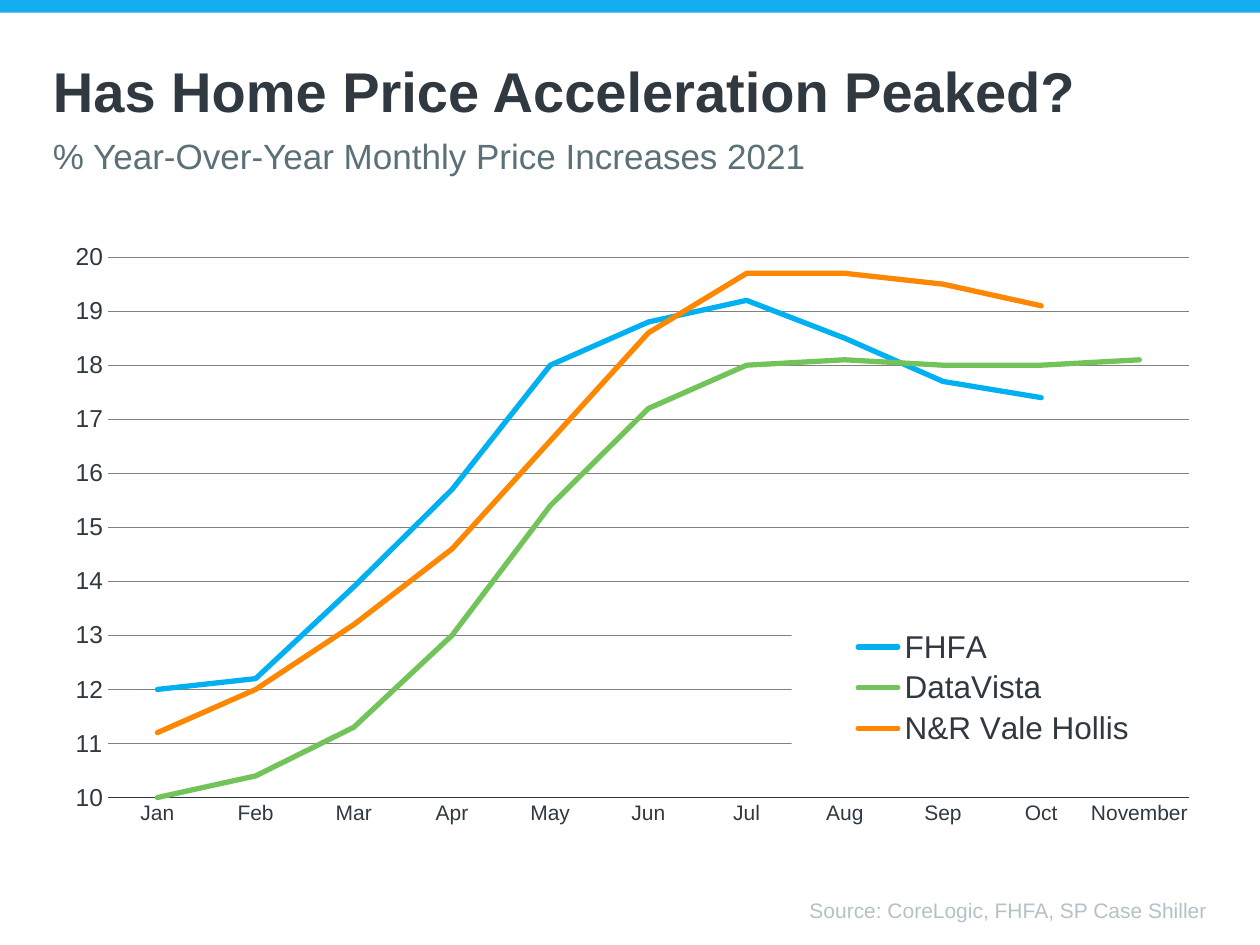
from dataclasses import dataclass

from lxml.etree import SubElement
from pptx import Presentation
from pptx.chart.data import CategoryChartData
from pptx.dml.color import RGBColor
from pptx.enum.chart import XL_CHART_TYPE, XL_LEGEND_POSITION, XL_TICK_MARK
from pptx.enum.shapes import MSO_SHAPE
from pptx.enum.text import MSO_ANCHOR, PP_ALIGN
from pptx.oxml.ns import qn
from pptx.util import Inches, Pt

FONT = "Arial"
INK = "303840"
MONTHS = ["Jan", "Feb", "Mar", "Apr", "May", "Jun", "Jul", "Aug", "Sep", "Oct", "November"]


@dataclass
class PriceIndex:
    name: str
    color: str
    values: list[float | None]


@dataclass
class Label:
    text: str
    top: float
    height: float
    size: int
    color: str
    bold: bool = False
    align: PP_ALIGN = PP_ALIGN.LEFT


INDEXES = [
    PriceIndex("FHFA", "00B0F0", [12, 12.2, 13.9, 15.7, 18, 18.8, 19.2, 18.5, 17.7, 17.4, None]),
    PriceIndex("DataVista", "72C45A", [10, 10.4, 11.3, 13, 15.4, 17.2, 18, 18.1, 18, 18, 18.1]),
    PriceIndex("N&R Vale Hollis", "FD8700", [11.2, 12, 13.2, 14.6, 16.6, 18.6, 19.7, 19.7, 19.5, 19.1, None]),
]
TITLE = Label("Has Home Price Acceleration Peaked?", 0.45, 0.5, 32, INK, bold=True)
SUBTITLE = Label("% Year-Over-Year Monthly Price Increases 2021", 1.07, 0.34, 20, "5B7077")
SOURCE = Label("Source: CoreLogic, FHFA, SP Case Shiller", 7.12, 0.2, 12, "B4C1C6", align=PP_ALIGN.RIGHT)


def rgb(color: str) -> RGBColor:
    return RGBColor.from_string(color)


def style_font(font, size: int, color: str = INK, bold: bool = False) -> None:
    font.name, font.size, font.bold = FONT, Pt(size), bold
    font.color.rgb = rgb(color)


def write_label(sp, label: Label) -> None:
    sp.left, sp.top = Inches(0.42), Inches(label.top)
    sp.width, sp.height = Inches(9.16), Inches(label.height)
    tf = sp.text_frame
    tf.text = label.text
    tf.word_wrap = True
    tf.vertical_anchor = MSO_ANCHOR.TOP
    tf.margin_left = tf.margin_right = tf.margin_top = tf.margin_bottom = 0
    p = tf.paragraphs[0]
    p.alignment = label.align
    style_font(p.runs[0].font, label.size, label.color, label.bold)


def add_label(s, label: Label) -> None:
    write_label(s.shapes.add_textbox(0, 0, 0, 0), label)


def set_layout(owner, x: float, y: float, w: float, h: float, inner: bool = False) -> None:
    layout = owner.find(qn("c:layout"))
    if layout is None:
        layout = SubElement(owner, qn("c:layout"))
    for child in list(layout):
        layout.remove(child)
    manual = SubElement(layout, qn("c:manualLayout"))
    settings = {"layoutTarget": "inner"} if inner else {}
    settings |= {"xMode": "edge", "yMode": "edge", "x": x, "y": y, "w": w, "h": h}
    for tag, value in settings.items():
        SubElement(manual, qn(f"c:{tag}")).set("val", str(value))
    if inner:
        owner.insert(0, layout)
    else:
        owner.find(qn("c:legendPos")).addnext(layout)


def style_axes(chart) -> None:
    months, rates = chart.category_axis, chart.value_axis
    for axis, size in ((months, 12), (rates, 14)):
        axis.major_tick_mark = axis.minor_tick_mark = XL_TICK_MARK.NONE
        style_font(axis.tick_labels.font, size)
    months.format.line.color.rgb = rgb(INK)
    months.format.line.width = Pt(1)
    rates.minimum_scale, rates.maximum_scale, rates.major_unit = 10, 20, 1
    rates.format.line.fill.background()
    rates.has_major_gridlines = True
    grid = rates.major_gridlines.format.line
    grid.color.rgb = rgb("808080")
    grid.width = Pt(0.75)


def style_legend(chart) -> None:
    chart.has_legend = True
    legend = chart.legend
    legend.position = XL_LEGEND_POSITION.BOTTOM
    legend.include_in_layout = False
    style_font(legend.font, 18)
    el = legend._element
    set_layout(el, 0.64, 0.61, 0.35, 0.2)
    sp_pr = el.makeelement(qn("c:spPr"))
    el.find(qn("c:txPr")).addprevious(sp_pr)
    fill = SubElement(sp_pr, qn("a:solidFill"))
    SubElement(fill, qn("a:srgbClr")).set("val", "FFFFFF")


def add_price_chart(s) -> None:
    data = CategoryChartData()
    data.categories = MONTHS
    for index in INDEXES:
        data.add_series(index.name, index.values)
    chart = s.shapes.add_chart(
        XL_CHART_TYPE.LINE, Inches(0.42), Inches(1.88), Inches(9.16), Inches(5.04), data
    ).chart
    chart.has_title = False
    style_font(chart.font, 10)
    chart.plots[0].vary_by_categories = False
    for series, index in zip(chart.plots[0].series, INDEXES):
        series.smooth = False
        line = series.format.line
        line.color.rgb = rgb(index.color)
        line.width = Pt(3)
        line._get_or_add_ln().set("cap", "rnd")
    style_axes(chart)
    style_legend(chart)
    set_layout(chart._chartSpace.chart.plotArea, 0.048, 0.032, 0.936, 0.851, inner=True)


def main() -> None:
    """Build the home price slide."""
    prs = Presentation()
    prs.slide_width, prs.slide_height = Inches(10), Inches(7.5)
    s = prs.slides.add_slide(prs.slide_layouts[5])
    bar = s.shapes.add_shape(MSO_SHAPE.RECTANGLE, 0, 0, prs.slide_width, Inches(0.1))
    bar.shadow.inherit = False
    bar.fill.solid()
    bar.fill.fore_color.rgb = rgb("14ADF0")
    bar.line.fill.background()
    write_label(s.shapes.title, TITLE)
    add_label(s, SUBTITLE)
    add_label(s, SOURCE)
    add_price_chart(s)
    prs.save("out.pptx")


if __name__ == "__main__":
    main()
